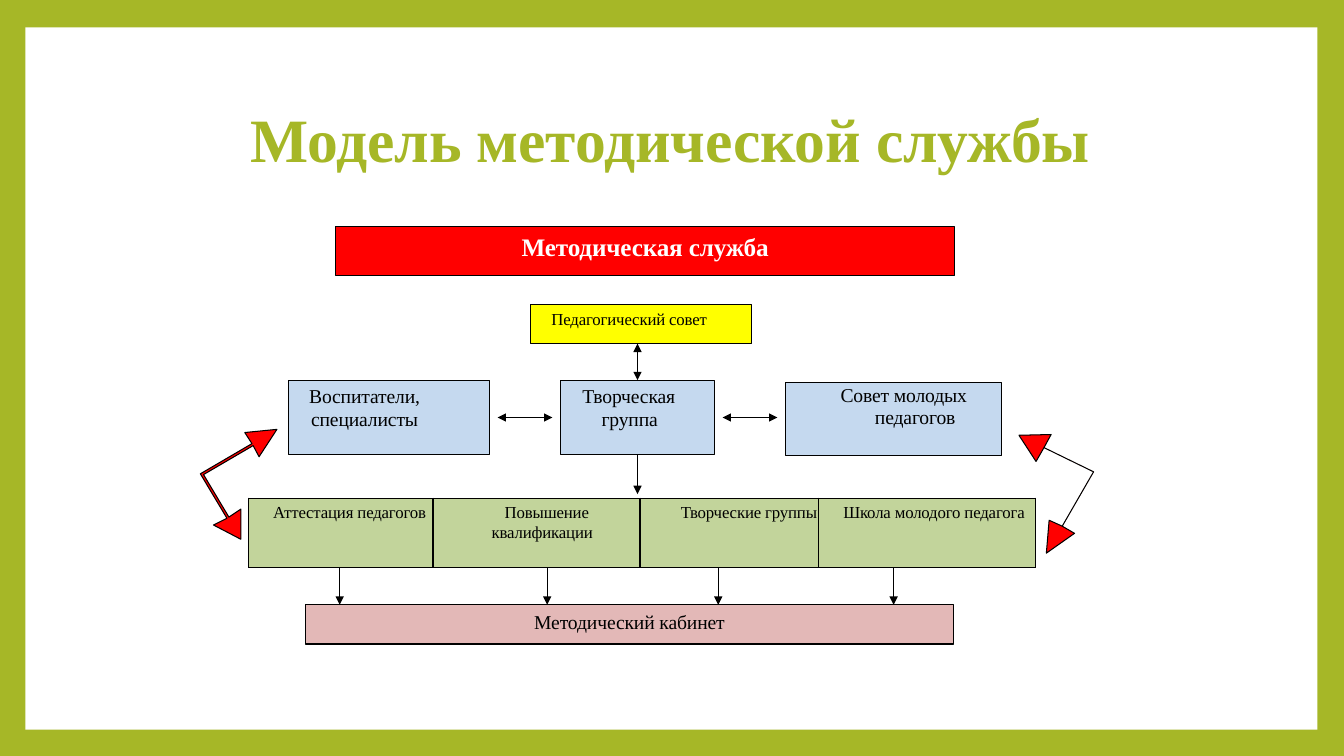
from dataclasses import dataclass

from lxml import etree
from pptx import Presentation
from pptx.dml.color import RGBColor
from pptx.enum.shapes import MSO_CONNECTOR, MSO_SHAPE
from pptx.enum.text import MSO_ANCHOR, MSO_AUTO_SIZE, PP_ALIGN
from pptx.oxml.ns import qn
from pptx.util import Cm, Pt


@dataclass(frozen=True)
class Theme:
    font: str = "Times New Roman"
    accent: str = "A6B727"
    white: str = "FFFFFF"
    black: str = "000000"
    red: str = "FF0000"
    yellow: str = "FFFF00"
    blue: str = "C5D9EF"
    green: str = "C2D49B"
    pink: str = "E3B8B7"
    title: int = 44
    banner: int = 18
    body: int = 14
    small: int = 12
    line: float = 0.75


@dataclass(frozen=True)
class Box:
    """A rectangle measured in centimetres."""
    x: float
    y: float
    w: float
    h: float

    def inner(self, dx, dy, w, h):
        return Box(self.x + dx, self.y + dy, w, h)

    def emu(self):
        return Cm(self.x), Cm(self.y), Cm(self.w), Cm(self.h)


T = Theme()
TIGHT = "-10"
TOP, BOTTOM = 0, 2


def rgb(value):
    return RGBColor.from_string(value)


def paint(sp, fill, line=T.black):
    sp.shadow.inherit = False
    sp.fill.solid()
    sp.fill.fore_color.rgb = rgb(fill)
    if line is None:
        sp.line.fill.background()
    else:
        sp.line.color.rgb = rgb(line)
        sp.line.width = Pt(T.line)


def write(tf, text, size, color=T.black, bold=False, align=PP_ALIGN.CENTER,
          left=0, first=0, leading=None, before=0):
    """Fill a text frame; left and first-line indents are in centimetres."""
    tf.word_wrap = True
    tf.text = text
    p = tf.paragraphs[0]
    p.alignment = align
    p.space_before = Pt(before)
    if leading:
        p.line_spacing = leading
    pPr = p._p.get_or_add_pPr()
    pPr.set("marL", str(Cm(left)))
    pPr.set("indent", str(Cm(first)))
    for r in p.runs:
        r.font.name = T.font
        r.font.size = Pt(size)
        r.font.bold = bold
        r.font.color.rgb = rgb(color)
        r._r.get_or_add_rPr().set("spc", TIGHT)


def add_block(s, box, fill, text, size, margins=(0, 0.12, 0, 0), **style):
    """Add an outlined rectangle; margins are left, top, right, bottom."""
    sp = s.shapes.add_shape(MSO_SHAPE.RECTANGLE, *box.emu())
    paint(sp, fill)
    tf = sp.text_frame
    tf.vertical_anchor = MSO_ANCHOR.TOP
    tf.margin_left, tf.margin_top, tf.margin_right, tf.margin_bottom = map(Cm, margins)
    write(tf, text, size, **style)
    return sp


def add_arrow(s, x1, y1, x2, y2, both=False):
    cxn = s.shapes.add_connector(MSO_CONNECTOR.STRAIGHT, Cm(x1), Cm(y1), Cm(x2), Cm(y2))
    cxn.line.color.rgb = rgb(T.black)
    cxn.line.width = Pt(1)
    ln = cxn.line._get_or_add_ln()
    for tag in ("a:headEnd", "a:tailEnd") if both else ("a:tailEnd",):
        etree.SubElement(ln, qn(tag), type="triangle")
    etree.SubElement(cxn._element.spPr, qn("a:effectLst"))
    return cxn


def add_frame_and_title(s, panel, box):
    s.background.fill.solid()
    s.background.fill.fore_color.rgb = rgb(T.accent)
    title = s.shapes.title
    sp = s.shapes.add_shape(MSO_SHAPE.RECTANGLE, *panel.emu())
    paint(sp, T.white, None)
    title._element.addprevious(sp._element)
    title.left, title.top, title.width, title.height = box.emu()
    tf = title.text_frame
    tf.auto_size = MSO_AUTO_SIZE.NONE
    tf.vertical_anchor = MSO_ANCHOR.MIDDLE
    write(tf, "Модель методической службы", T.title, T.accent, True, leading=0.9)


def add_staff(s, box):
    """Place the three staff blocks and the links between them."""
    add_block(s, box.inner(0, 0, 5.08, 1.88), T.blue, "Воспитатели, специалисты",
              T.body, align=PP_ALIGN.LEFT, left=0.58, first=-0.05,
              leading=Pt(16.1), before=3.9)
    group_box = box.inner(6.86, 0, 3.89, 1.88)
    group = add_block(s, group_box, T.blue, "Творческая группа", T.body,
                      align=PP_ALIGN.LEFT, left=1.04, first=-0.48,
                      leading=Pt(16.3), before=3.8)
    add_block(s, box.inner(12.53, 0.07, 5.46, 1.83), T.blue, "Совет молодых педагогов",
              T.body, margins=(0, 0.02, 0, 0), left=1.09, first=-0.58,
              leading=Pt(16.1), before=1)
    gap, pad = 1.78, 0.2
    y = group_box.y + group_box.h / 2
    for x in (group_box.x - gap, group_box.x + group_box.w):
        add_arrow(s, x + pad, y, x + gap - pad, y, both=True)
    return group, group_box


def add_group_links(s, group, box, council_bottom, services_top):
    x = box.x + box.w / 2
    add_arrow(s, x, council_bottom, x, box.y, both=True).end_connect(group, TOP)
    add_arrow(s, x, box.y + box.h, x, services_top - 0.1).begin_connect(group, BOTTOM)


def set_borders(cell, left, right):
    tcPr = cell._tc.get_or_add_tcPr()
    widths = {"a:lnL": left, "a:lnR": right, "a:lnT": T.line, "a:lnB": T.line}
    for i, (tag, width) in enumerate(widths.items()):
        ln = etree.Element(qn(tag), w=str(Pt(width)))
        fill = etree.SubElement(ln, qn("a:solidFill"))
        etree.SubElement(fill, qn("a:srgbClr"), val=T.black)
        tcPr.insert(i, ln)


def add_services(s, box):
    # text, column width, left indent, first-line indent, right border
    services = [
        ("Аттестация педагогов", 4.65, 0.58, -0.15, 1.5),
        ("Повышение квалификации", 5.21, 0.28, 0.23, 1),
        ("Творческие группы", 4.5, 1.32, -0.33, T.line),
        ("Школа молодого педагога", 5.46, 0.74, -0.38, T.line),
    ]
    table = s.shapes.add_table(1, len(services), *box.emu()).table
    table.first_row = table.horz_banding = False
    table.rows[0].height = Cm(box.h)
    border = T.line
    for i, (text, width, left, first, right) in enumerate(services):
        table.columns[i].width = Cm(width)
        cell = table.cell(0, i)
        cell.margin_left = cell.margin_right = cell.margin_bottom = 0
        cell.margin_top = Cm(0.12)
        cell.fill.solid()
        cell.fill.fore_color.rgb = rgb(T.green)
        write(cell.text_frame, text, T.small, left=left, first=first,
              leading=Pt(14), before=3.4)
        set_borders(cell, border, right)
        border = right


def add_cabinet(s, box, services_bottom):
    add_block(s, box, T.pink, "Методический кабинет", T.body, before=3.2)
    for dx in (0.86, 6.09, 10.4, 14.82):
        add_arrow(s, box.x + dx, services_bottom, box.x + dx, box.y)


def add_bent_arrow(s, x, y, outline):
    """Draw a two-headed bent arrow with its box's corner at x, y."""
    points = [(Cm(x + dx), Cm(y + dy)) for dx, dy in outline]
    builder = s.shapes.build_freeform(*points[0])
    builder.add_line_segments(points[1:], close=True)
    paint(builder.convert_to_shape(), T.red)


def main():
    prs = Presentation()
    prs.slide_width, prs.slide_height = Cm(33.87), Cm(19.05)
    s = prs.slides.add_slide(prs.slide_layouts[5])
    add_frame_and_title(s, Box(0.64, 0.69, 32.56, 17.7), Box(3.18, 1.7, 27.43, 3.76))
    add_block(s, Box(8.46, 5.72, 15.6, 1.22), T.red, "Методическая служба",
              T.banner, margins=(0, 0.1, 0, 0), color=T.white, bold=True, before=3)
    council = Box(13.36, 7.67, 5.59, 0.99)
    add_block(s, council, T.yellow, "Педагогический совет", T.small,
              margins=(0.25, 0.1, 0.84, 0))
    services = Box(6.27, 12.55, 19.82, 1.75)
    group, group_box = add_staff(s, Box(7.26, 9.58, 17.99, 1.9))
    add_group_links(s, group, group_box, council.y + council.h, services.y)
    add_services(s, services)
    add_cabinet(s, Box(7.7, 15.24, 16.33, 0.99), services.y + services.h)
    add_bent_arrow(s, 5.05, 10.82, [
        (1.93, 0), (1.48, 0.69), (1.33, 0.41), (0.08, 1.14), (0.72, 2.21), (1.02, 2.01),
        (1.02, 2.77), (0.33, 2.41), (0.67, 2.24), (0, 1.12), (1.3, 0.36), (1.12, 0.08)])
    shaft = [(0.63, 0.33), (1.88, 0.94), (1.09, 2.31)]
    add_bent_arrow(s, 25.68, 10.95, [
        (0, 0.02), (0.43, 0.68), *shaft, (0.76, 2.16), (0.69, 2.99), (1.4, 2.49),
        *reversed(shaft), (0.81, 0)])
    prs.save("out.pptx")


if __name__ == "__main__":
    main()
